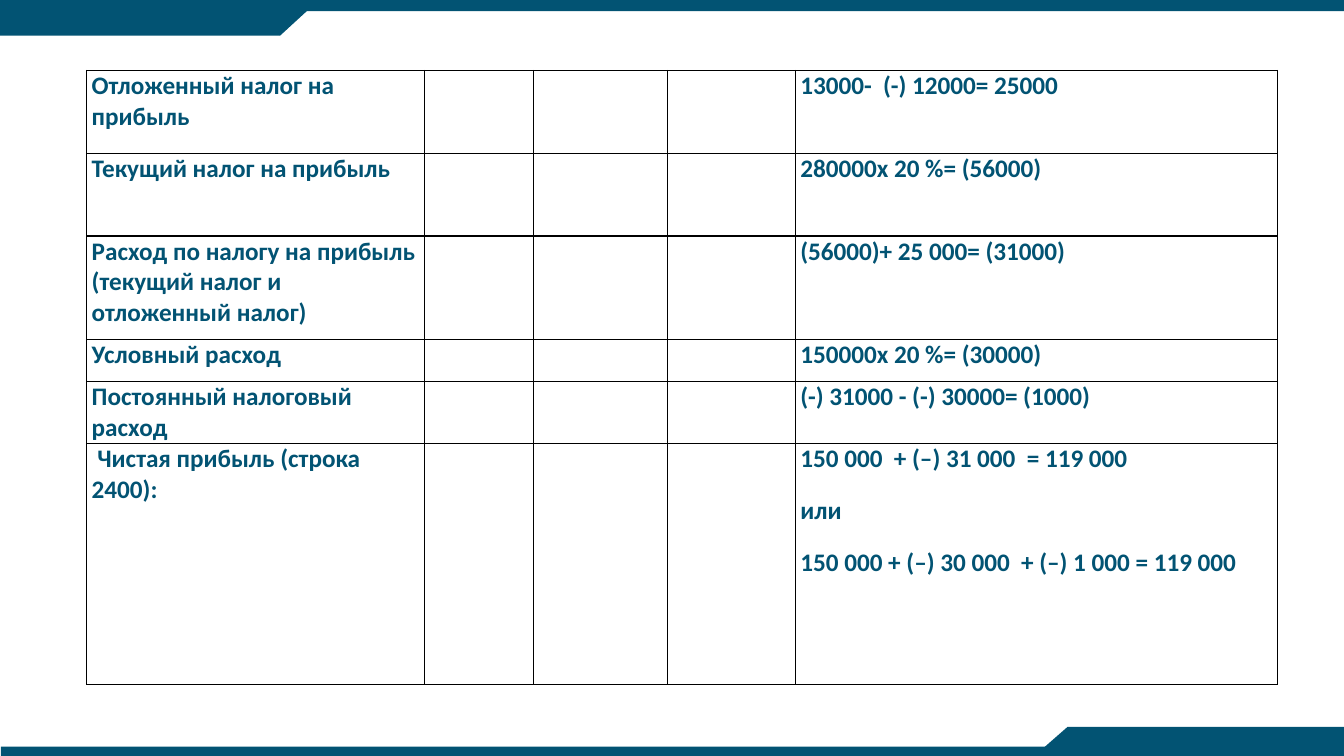
"""Build a slide with a table of profit tax calculations."""
from dataclasses import dataclass

import lxml.etree
import pptx
import pptx.dml.color
import pptx.enum.shapes
import pptx.oxml.ns
import pptx.util

Pt = pptx.util.Pt
RGB = pptx.dml.color.RGBColor
SHAPE = pptx.enum.shapes.MSO_SHAPE
qn = pptx.oxml.ns.qn


@dataclass(frozen=True)
class Theme:
    """Colours, font and type sizes."""
    accent: str = "025373"
    border: str = "000000"
    font: str = "Calibri"
    size: float = 18
    space_after: float = 15
    border_width: float = 1


THEME = Theme()
WIDTH, HEIGHT = 960, 540
TABLE_LEFT, TABLE_TOP = 61.9, 50.4
COLUMNS = [241.2, 77.8, 95.8, 91.4, 344.2]
ROWS = [
    (59.2, "Отложенный налог на прибыль", ["13000-  (-) 12000= 25000"]),
    (59, "Текущий налог на прибыль", ["280000х 20 %= (56000)"]),
    (74.2, "Расход по налогу на прибыль (текущий налог и отложенный налог)",
     ["(56000)+ 25 000= (31000)"]),
    (29.6, "Условный расход", ["150000х 20 %= (30000)"]),
    (44.6, "Постоянный налоговый расход", ["(-) 31000 - (-) 30000= (1000)"]),
    (172, " Чистая прибыль (строка 2400):",
     ["150 000  + (–) 31 000  = 119 000", "или",
      "150 000 + (–) 30 000  + (–) 1 000 = 119 000"]),
]


def add_band(s, kind, left, top, width, height, rotation=0):
    """Add a plain filled shape in the accent colour."""
    sp = s.shapes.add_shape(kind, Pt(left), Pt(top), Pt(width), Pt(height))
    sp.rotation = rotation
    sp.shadow.inherit = False
    sp.fill.solid()
    sp.fill.fore_color.rgb = RGB.from_string(THEME.accent)
    sp.line.fill.background()


def add_frame(s):
    """Add the bars and slanted tabs at the top and bottom edges."""
    add_band(s, SHAPE.RECTANGLE, 0, 0, WIDTH, 7.9)
    add_band(s, SHAPE.RECTANGLE, 0.7, 533.3, WIDTH - 0.7, HEIGHT - 533.3)
    add_band(s, SHAPE.RECTANGLE, 0, 3.6, 200, 21.8)
    add_band(s, SHAPE.FLOWCHART_MERGE, 176.4, 3.6, 47.5, 21.8)
    add_band(s, SHAPE.RECTANGLE, 762.6, 519.2, WIDTH - 762.6, HEIGHT - 519.2)
    add_band(s, SHAPE.FLOWCHART_MERGE, 738.8, 519.2, 47.5, HEIGHT - 519.2, 180)


def set_borders(cell):
    """Draw a solid line on each side of a cell."""
    tc_pr = cell._tc.get_or_add_tcPr()
    for side in ("a:lnL", "a:lnR", "a:lnT", "a:lnB"):
        ln = lxml.etree.SubElement(tc_pr, qn(side), w=str(Pt(THEME.border_width)))
        fill = lxml.etree.SubElement(ln, qn("a:solidFill"))
        lxml.etree.SubElement(fill, qn("a:srgbClr"), val=THEME.border)


def fill_cell(cell, lines):
    """Write the lines of a cell as paragraphs and style it."""
    cell.margin_left = cell.margin_right = Pt(3.6)
    cell.margin_top = cell.margin_bottom = 0
    set_borders(cell)
    cell.fill.background()
    tf = cell.text_frame
    tf.text = "\n".join(lines)
    for p in tf.paragraphs:
        p.space_after = Pt(THEME.space_after)
        for r in p.runs:
            r.font.name = THEME.font
            r.font.size = Pt(THEME.size)
            r.font.bold = True
            r.font.color.rgb = RGB.from_string(THEME.accent)


def add_tax_table(s):
    """Add the table of tax items and their calculations."""
    heights = [height for height, _, _ in ROWS]
    table = s.shapes.add_table(
        len(ROWS), len(COLUMNS), Pt(TABLE_LEFT), Pt(TABLE_TOP),
        Pt(sum(COLUMNS)), Pt(sum(heights))).table
    table.first_row = table.horz_banding = False
    for column, width in zip(table.columns, COLUMNS):
        column.width = Pt(width)
    for row, (height, item, calculation) in zip(table.rows, ROWS):
        row.height = Pt(height)
        contents = [[item], [], [], [], calculation]
        for cell, lines in zip(row.cells, contents):
            fill_cell(cell, lines)


def main():
    """Build and save the presentation."""
    prs = pptx.Presentation()
    prs.slide_width, prs.slide_height = Pt(WIDTH), Pt(HEIGHT)
    s = prs.slides.add_slide(prs.slide_layouts[6])
    add_frame(s)
    add_tax_table(s)
    prs.save("out.pptx")


if __name__ == "__main__":
    main()
